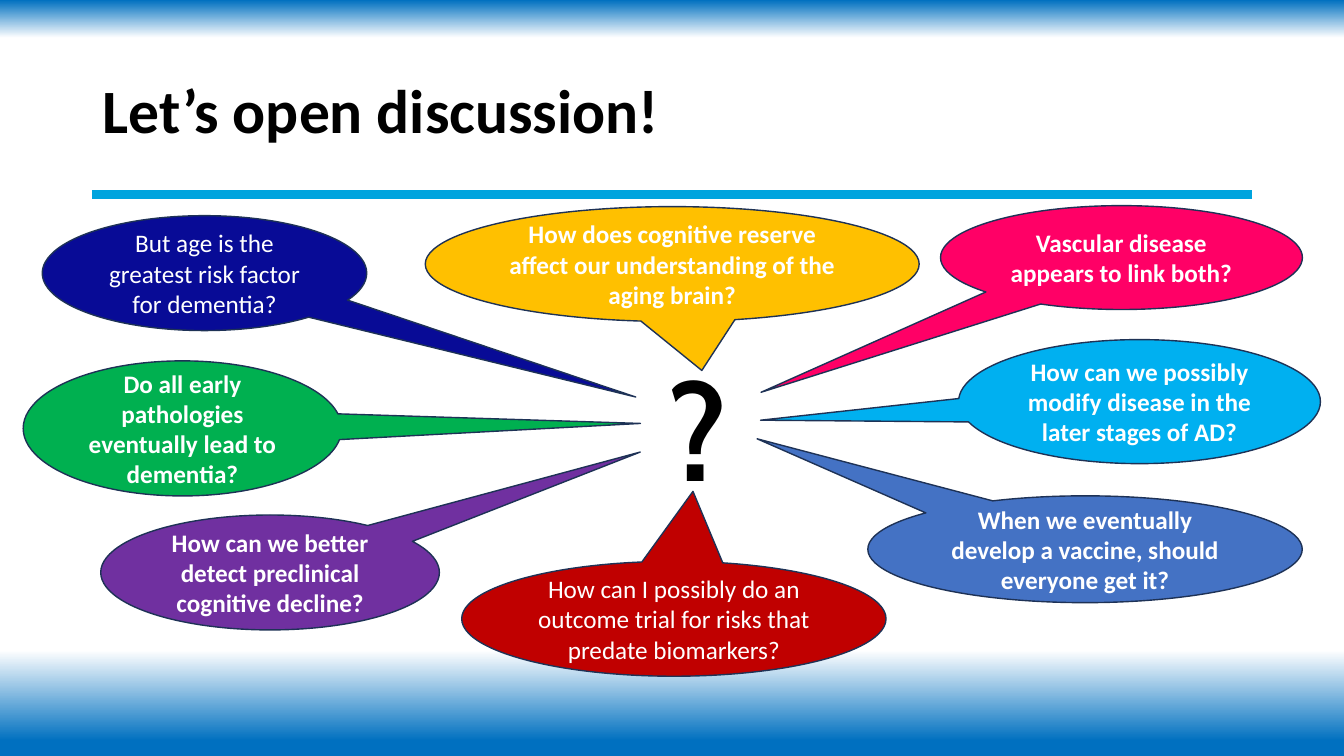
"""Build the open discussion slide with question callouts around a central mark."""
from dataclasses import dataclass

from lxml import etree
from pptx import Presentation
from pptx.dml.color import RGBColor
from pptx.enum import shapes, text
from pptx.oxml.ns import qn
from pptx.util import Pt

HUES = {
    "edge": "0070C0", "white": "FFFFFF", "black": "000000", "rule": "00A4DE",
    "outline": "1E3256", "purple": "7030A0", "pink": "FF0066", "green": "00B050",
    "gold": "FFC000", "navy": "080B96", "sky": "00B0F0", "blue": "4472C4",
    "red": "C00000",
}
STOPS = ((0, "edge"), (5, "white"), (86, "white"), (98, "edge"))


@dataclass(frozen=True)
class Bubble:
    words: str
    hue: str
    box: tuple[float, float, float, float]
    tip: tuple[float, float]
    bold: bool = True


BUBBLES = (
    Bubble("How can we better detect preclinical cognitive decline?", "purple",
           (72, 367.9, 241.9, 82.1), (1.093, -1.048)),
    Bubble("Vascular disease appears to link both?", "pink",
           (671.8, 146.9, 258.5, 74.2), (-0.996, 1.297)),
    Bubble("Do all early pathologies eventually lead to dementia?", "green",
           (16.6, 257.8, 227.5, 96.5), (1.438, -0.037)),
    Bubble("How does cognitive reserve affect our understanding of the aging brain?",
           "gold", (303.8, 147.6, 352.8, 82.1), (0.06, 0.926)),
    Bubble("But age is the greatest risk factor for dementia?", "navy",
           (30.2, 154.1, 231.8, 82.1), (1.329, 1.078), False),
    Bubble("How can we possibly modify disease in the later stages of AD?", "sky",
           (684.7, 242.6, 258.5, 88.6), (-1.047, 0.15)),
    Bubble("When we eventually develop a vaccine, should everyone get it?", "blue",
           (619.9, 354.2, 310.3, 76.3), (-0.755, -1.034)),
    Bubble("How can I possibly do an outcome trial for risks that predate biomarkers?",
           "red", (329.8, 401, 303.1, 82.1), (0.045, -1.109), False),
)


def tint(name: str) -> RGBColor:
    return RGBColor.from_string(HUES[name])


def write(frame, words: str, size: float, hue: str, bold: bool = True,
          face: str = "Calibri", align=text.PP_ALIGN.LEFT):
    frame.word_wrap = True
    para = frame.paragraphs[0]
    para.alignment = align
    run = para.add_run()
    run.text = words
    run.font.size = Pt(size)
    run.font.name = face
    run.font.bold = bold
    run.font.color.rgb = tint(hue)
    return para


def paint(slide) -> None:
    fill = slide.background.fill
    fill.gradient()
    fill.gradient_angle = 270
    stops = slide.element.find(".//" + qn("a:gsLst"))
    for old in list(stops):
        stops.remove(old)
    for pos, hue in STOPS:
        stop = etree.SubElement(stops, qn("a:gs"), pos=str(pos * 1000))
        etree.SubElement(stop, qn("a:srgbClr"), val=HUES[hue])


def rule(slide) -> None:
    line = slide.shapes.add_connector(
        shapes.MSO_CONNECTOR.STRAIGHT, Pt(66), Pt(139), Pt(894), Pt(139))
    line.line.color.rgb = tint("rule")
    line.line.width = Pt(6)
    etree.SubElement(line.element.spPr, qn("a:effectLst"))


def head(slide) -> None:
    title = slide.shapes.title
    title.left, title.top, title.width, title.height = map(Pt, (66, 28.8, 553.7, 104.4))
    frame = title.text_frame
    frame.auto_size = text.MSO_AUTO_SIZE.NONE
    frame.vertical_anchor = text.MSO_ANCHOR.MIDDLE
    write(frame, "Let’s open discussion!", 44, "black").line_spacing = 0.9


def speak(slide, bubble: Bubble) -> None:
    shape = slide.shapes.add_shape(
        shapes.MSO_SHAPE.OVAL_CALLOUT, *map(Pt, bubble.box))
    shape.adjustments[0], shape.adjustments[1] = bubble.tip
    shape.shadow.inherit = False
    shape.fill.solid()
    shape.fill.fore_color.rgb = tint(bubble.hue)
    shape.line.color.rgb = tint("outline")
    shape.line.width = Pt(1)
    shape.text_frame.vertical_anchor = text.MSO_ANCHOR.MIDDLE
    write(shape.text_frame, bubble.words, 18, "white", bubble.bold,
          align=text.PP_ALIGN.CENTER)


def main() -> None:
    deck = Presentation()
    deck.slide_width, deck.slide_height = Pt(960), Pt(540)
    slide = deck.slides.add_slide(deck.slide_layouts[5])
    paint(slide)
    rule(slide)
    head(slide)
    for bubble in BUBBLES:
        speak(slide, bubble)
    mark = slide.shapes.add_textbox(*map(Pt, (470.2, 244.1, 81.4, 123.8)))
    write(mark.text_frame, "?", 96, "black", face="Cabin")
    deck.save("out.pptx")


if __name__ == "__main__":
    main()
